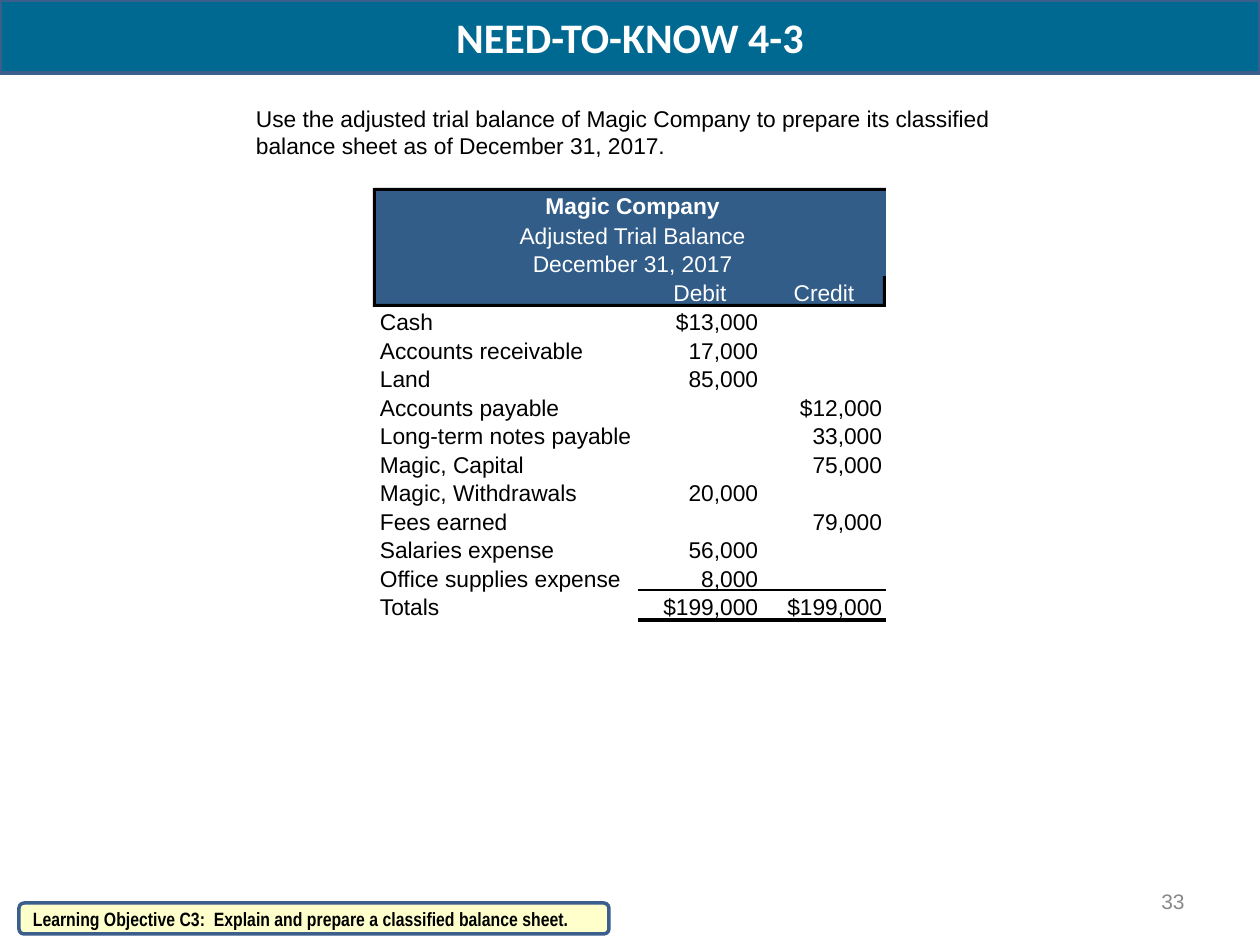
import pptx
import pptx.util
from lxml import etree
from pptx.dml.color import RGBColor
from pptx.enum.shapes import MSO_CONNECTOR, MSO_SHAPE
from pptx.enum.text import MSO_ANCHOR, PP_ALIGN
from pptx.oxml.ns import qn

# Content
TITLE = "NEED-TO-KNOW 4-3"
TASK = ("Use the adjusted trial balance of Magic Company to prepare its "
        "classified balance sheet as of December 31, 2017.")
HEADINGS = ["Magic Company", "Adjusted Trial Balance", "December 31, 2017"]
BALANCE = [
    ("", "Debit", "Credit"),
    ("Cash", "$13,000", ""),
    ("Accounts receivable", "17,000", ""),
    ("Land", "85,000", ""),
    ("Accounts payable", "", "$12,000"),
    ("Long-term notes payable", "", "33,000"),
    ("Magic, Capital", "", "75,000"),
    ("Magic, Withdrawals", "20,000", ""),
    ("Fees earned", "", "79,000"),
    ("Salaries expense", "56,000", ""),
    ("Office supplies expense", "8,000", ""),
    ("Totals", "$199,000", "$199,000"),
]
OBJECTIVE = "Learning Objective C3:  Explain and prepare a classified balance sheet."
PAGE = "33"

TEAL = RGBColor(0x00, 0x69, 0x91)
BLUE = RGBColor(0x31, 0x5D, 0x88)
OUTLINE = RGBColor(0x3A, 0x5F, 0x8C)
CREAM = RGBColor(0xFF, 0xFF, 0xCC)
GRAY = RGBColor(0x89, 0x89, 0x89)
WHITE = RGBColor(0xFF, 0xFF, 0xFF)
BLACK = RGBColor(0x00, 0x00, 0x00)

# Layout in px
TABLE_LEFT, TABLE_TOP = 374, 189
COLUMNS = [264, 124, 124]
HEADER_ROWS = [30, 30, 28, 30]
BODY_HEIGHT = 314
BAR = 3
RULES = [590, 619, 621]
NO_STYLE = "{2D5ABB26-0587-4C30-8999-92F81FD0307C}"


def px(length):
    return pptx.util.Emu(round(length * 914400 / 126))


def write(frame, text, size, color, align=PP_ALIGN.LEFT, font="Arial", bold=False):
    paragraph = frame.paragraphs[0]
    paragraph.text = text
    paragraph.alignment = align
    paragraph.font.size = pptx.util.Pt(size)
    paragraph.font.name = font
    paragraph.font.bold = bold
    paragraph.font.color.rgb = color
    return paragraph


def add_text(left, top, width, height):
    frame = slide.shapes.add_textbox(px(left), px(top), px(width), px(height)).text_frame
    frame.word_wrap = True
    return frame


def add_panel(kind, left, top, width, height, fill, outline=OUTLINE):
    panel = slide.shapes.add_shape(kind, px(left), px(top), px(width), px(height))
    panel.shadow.inherit = False
    panel.fill.solid()
    panel.fill.fore_color.rgb = fill
    if outline is None:
        panel.line.fill.background()
    else:
        panel.line.color.rgb = outline
        panel.line.width = pptx.util.Pt(2)
    panel.text_frame.vertical_anchor = MSO_ANCHOR.MIDDLE
    return panel.text_frame


deck = pptx.Presentation()
deck.slide_width, deck.slide_height = px(1260), px(945)
slide = deck.slides.add_slide(deck.slide_layouts[6])

# Title band and task
write(add_panel(MSO_SHAPE.RECTANGLE, 0, 0, 1260, 73, TEAL),
      TITLE, 24, WHITE, PP_ALIGN.CENTER, "Calibri", True)
task = add_text(256, 105, 742, 55)
task.margin_left = task.margin_right = task.margin_top = task.margin_bottom = 0
write(task, TASK, 13, BLACK).line_spacing = pptx.util.Pt(15.5)

# Trial balance
rows = [(heading, "", "") for heading in HEADINGS] + BALANCE
body_count = len(rows) - len(HEADER_ROWS)
heights = HEADER_ROWS + [BODY_HEIGHT / body_count] * body_count
last_header = len(HEADER_ROWS) - 1
table_width = sum(COLUMNS)
table = slide.shapes.add_table(len(rows), len(COLUMNS), px(TABLE_LEFT), px(TABLE_TOP),
                               px(table_width), px(sum(heights))).table
table.first_row = table.horz_banding = False
table._tbl.tblPr.find(qn("a:tableStyleId")).text = NO_STYLE
for column, width in zip(table.columns, COLUMNS):
    column.width = px(width)

for r, (row, height) in enumerate(zip(rows, heights)):
    table.rows[r].height = px(height)
    header = r <= last_header
    for c, text in enumerate(row):
        cell = table.cell(r, c)
        cell.margin_left = px(9 if r < last_header else 4 if header else 6)
        cell.margin_right = px(4)
        cell.margin_top = 0
        cell.margin_bottom = px(1 if r == last_header else 0)
        cell.vertical_anchor = MSO_ANCHOR.BOTTOM
        align = (PP_ALIGN.CENTER if header
                 else PP_ALIGN.RIGHT if c else PP_ALIGN.LEFT)
        paragraph = write(cell.text_frame, text, 13, WHITE if header else BLACK,
                          align, bold=r == 0)
        etree.SubElement(paragraph._p, qn("a:endParaRPr"), sz="1300")
        if header:
            cell.fill.solid()
            cell.fill.fore_color.rgb = BLUE
        else:
            cell.fill.background()
    if r < len(HEADINGS):
        table.cell(r, 0).merge(table.cell(r, len(COLUMNS) - 1))

# Bars around the header: left, right (last row only), top, bottom
right = TABLE_LEFT + table_width
header_bottom = TABLE_TOP + sum(HEADER_ROWS)
last_height = HEADER_ROWS[-1]
for bar in [
    (TABLE_LEFT - 1, TABLE_TOP - 1, BAR, header_bottom - TABLE_TOP + 1),
    (right - BAR, header_bottom - last_height - 1, BAR, last_height + 1),
    (TABLE_LEFT, TABLE_TOP - 1, table_width, BAR),
    (TABLE_LEFT, header_bottom - BAR, table_width, BAR),
]:
    add_panel(MSO_SHAPE.RECTANGLE, *bar, BLACK, None)

# Rules above and below the totals
for rule_y in RULES:
    rule = slide.shapes.add_connector(
        MSO_CONNECTOR.STRAIGHT, px(right - sum(COLUMNS[1:])), px(rule_y),
        px(right), px(rule_y))
    rule.line.color.rgb = BLACK
    rule.line.width = pptx.util.Pt(0.75)
    etree.SubElement(rule._element.spPr, qn("a:effectLst"))

# Footer
page = add_text(903, 876, 294, 50)
page.vertical_anchor = MSO_ANCHOR.MIDDLE
write(page, PAGE, 12, GRAY, PP_ALIGN.RIGHT)
write(add_panel(MSO_SHAPE.ROUNDED_RECTANGLE, 19, 903, 590, 31, CREAM),
      OBJECTIVE, 11, BLACK, font="Arial Narrow", bold=True)

deck.save("out.pptx")
